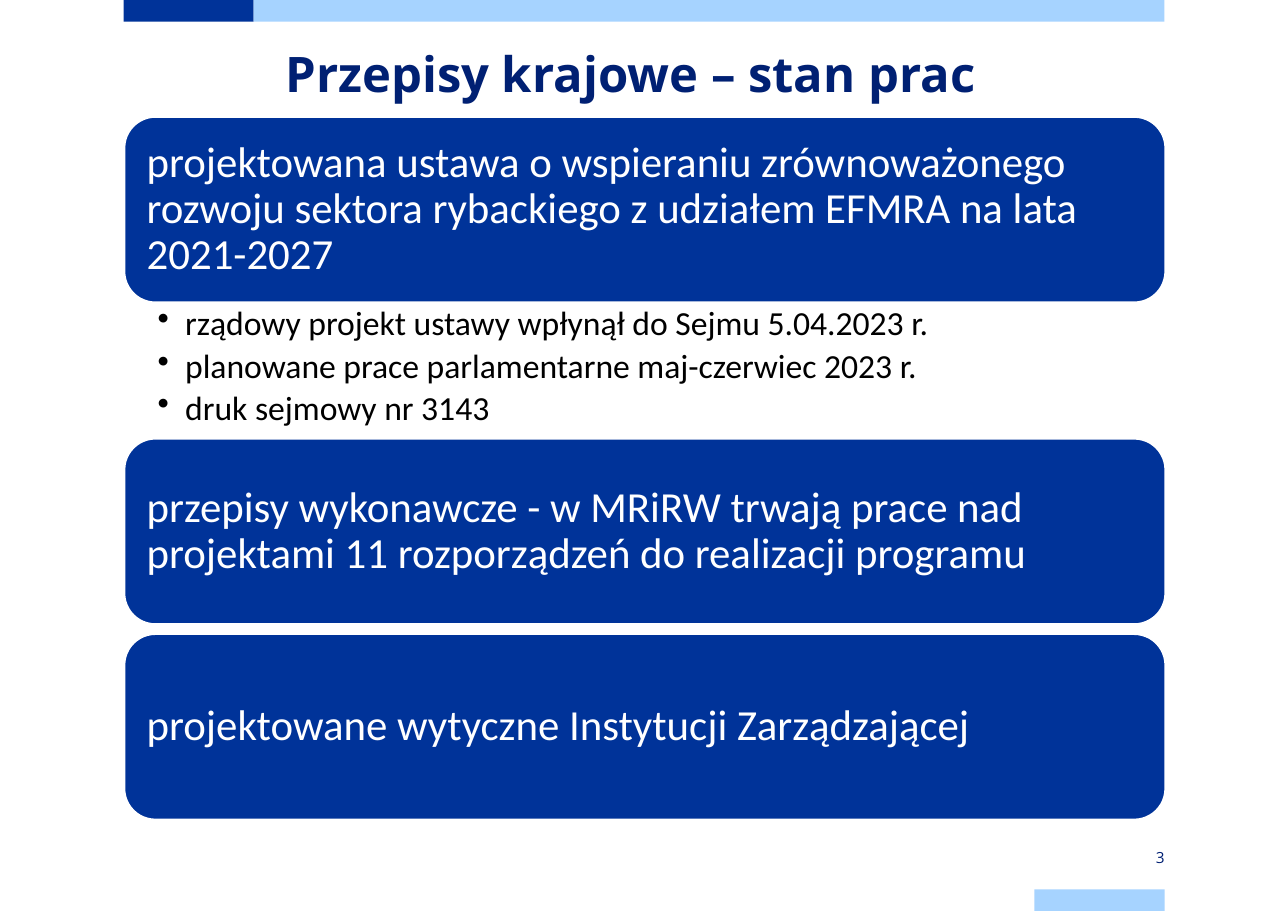
import pptx
import pptx.util
import pptx.dml.color
import pptx.enum.shapes
import pptx.enum.text
from dataclasses import dataclass

Pt = pptx.util.Pt
RGB = pptx.dml.color.RGBColor.from_string
MSO_SHAPE = pptx.enum.shapes.MSO_SHAPE
ANCHOR = pptx.enum.text.MSO_ANCHOR
ALIGN = pptx.enum.text.PP_ALIGN


@dataclass(frozen=True)
class Theme:
    blue: str = "003399"
    sky: str = "A6D3FF"
    navy: str = "002073"
    white: str = "FFFFFF"
    black: str = "000000"
    head_font: str = "Open Sans"
    body_font: str = "Calibri"
    title: int = 32
    box: int = 28
    bullet: int = 22
    number: int = 10


class Deck:
    def __init__(self, prs, theme):
        self.theme = theme
        self.s = prs.slides.add_slide(prs.slide_layouts[5])

    def fill_text(self, sp, lines, font, para, margins, anchor=ANCHOR.TOP, bullet=False):
        """Fill a shape with paragraphs; margins are left, top, right, bottom."""
        tf = sp.text_frame
        frame = dict(zip(("margin_left", "margin_top", "margin_right", "margin_bottom"),
                         map(Pt, margins)))
        frame.update(word_wrap=True, vertical_anchor=anchor,
                     auto_size=pptx.enum.text.MSO_AUTO_SIZE.NONE)
        for name, value in frame.items():
            setattr(tf, name, value)
        name, size, color, bold = font
        for i, line in enumerate(lines):
            p = tf.add_paragraph() if i else tf.paragraphs[0]
            for key, value in para.items():
                setattr(p, key, value)
            if bullet:
                self.add_bullet(p)
            r = p.add_run()
            r.text = line
            for key, value in dict(name=name, size=Pt(size), bold=bold).items():
                setattr(r.font, key, value)
            r.font.color.rgb = RGB(color)

    def add_bullet(self, p):
        pPr = p._p.get_or_add_pPr()
        pPr.set("marL", str(Pt(18)))
        pPr.set("indent", str(-Pt(18)))
        pPr.append(pptx.oxml.parse_xml(
            '<a:buChar xmlns:a="http://schemas.openxmlformats.org/drawingml/2006/main" char="•"/>'))

    def shape(self, kind, at, fill, line=None):
        sp = self.s.shapes.add_shape(kind, *map(Pt, at))
        sp.shadow.inherit = False
        sp.fill.solid()
        sp.fill.fore_color.rgb = RGB(fill)
        if line:
            sp.line.color.rgb = RGB(line)
            sp.line.width = Pt(1)
        else:
            sp.line.fill.background()
        return sp

    def bar(self, at, fill):
        self.shape(MSO_SHAPE.RECTANGLE, at, fill)

    def title(self, at, text):
        t, sp = self.theme, self.s.shapes.title
        for key, value in zip(("left", "top", "width", "height"), at):
            setattr(sp, key, Pt(value))
        self.fill_text(sp, [text], (t.head_font, t.title, t.navy, True),
                       dict(alignment=ALIGN.CENTER, line_spacing=Pt(36)), (0, 0, 0, 0))

    def box(self, at, text):
        t = self.theme
        sp = self.shape(MSO_SHAPE.ROUNDED_RECTANGLE, at, t.blue, t.white)
        self.fill_text(sp, [text], (t.body_font, t.box, t.white, False),
                       dict(alignment=ALIGN.LEFT, line_spacing=0.9),
                       (8.6, 8.6, 8.6, 8.6), ANCHOR.MIDDLE)

    def bullets(self, at, lines):
        t = self.theme
        sp = self.s.shapes.add_textbox(*map(Pt, at))
        self.fill_text(sp, lines, (t.body_font, t.bullet, t.black, False),
                       dict(line_spacing=0.9, space_after=Pt(4)),
                       (21.6, 2.9, 15.8, 2.9), bullet=True)

    def page_number(self, at, text):
        t = self.theme
        sp = self.s.shapes.add_textbox(*map(Pt, at))
        self.fill_text(sp, [text], (t.head_font, t.number, t.navy, False),
                       dict(alignment=ALIGN.RIGHT), (0, 5.8, 0, 5.8), ANCHOR.MIDDLE)


SECTIONS = [
    ("projektowana ustawa o wspieraniu zrównoważonego rozwoju sektora rybackiego "
     "z udziałem EFMRA na lata 2021-2027",
     ["rządowy projekt ustawy wpłynął do Sejmu 5.04.2023 r.",
      "planowane prace parlamentarne maj-czerwiec 2023 r.",
      "druk sejmowy nr 3143"]),
    ("przepisy wykonawcze - w MRiRW trwają prace nad projektami 11 rozporządzeń "
     "do realizacji programu", []),
    ("projektowane wytyczne Instytucji Zarządzającej", []),
]


def main():
    prs = pptx.Presentation()
    prs.slide_width, prs.slide_height = Pt(841.7), Pt(595.4)
    theme = Theme()
    deck = Deck(prs, theme)

    left, short, bar_h = 80.8, 85, 14.2
    right = 761
    deck.bar((left, 0, short, bar_h), theme.blue)
    deck.bar((left + short, 0, right - left - short, bar_h), theme.sky)
    deck.bar((right - short, 595.4 - bar_h, short, bar_h), theme.sky)
    deck.title((left, 31, 663, 62.6), "Przepisy krajowe – stan prac")

    box_left, width, box_h, list_h, gap = 81.4, 680, 121, 89.3, 6.7
    top = 76.5
    for heading, points in SECTIONS:
        deck.box((box_left, top, width, box_h), heading)
        top += box_h
        if points:
            deck.bullets((box_left, top, width, list_h), points)
        top += list_h if points else gap

    deck.page_number((right - short, 553, short, 14.2), "3")
    prs.save("out.pptx")


if __name__ == "__main__":
    main()
